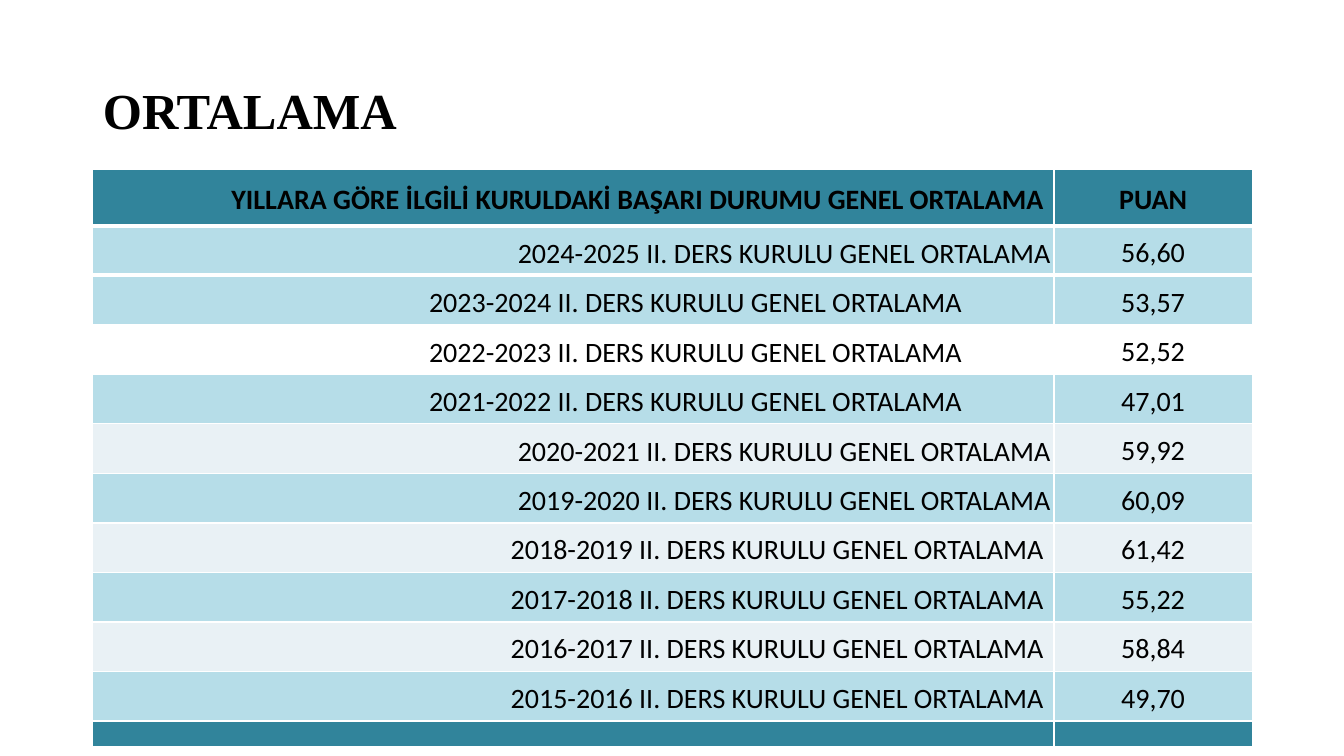
from lxml.etree import SubElement
from pptx import Presentation
from pptx.dml.color import RGBColor
from pptx.enum.text import MSO_ANCHOR as Anchor, PP_ALIGN as Align
from pptx.oxml.ns import qn
from pptx.util import Inches, Pt

COLORS = {"text": "000000", "border": "FFFFFF", "header": "31849B",
          "band": "B6DDE8", "pale": "E9F1F5"}
LABEL = "II. DERS KURULU GENEL ORTALAMA"
HEADINGS = ("YILLARA GÖRE İLGİLİ KURULDAKİ BAŞARI DURUMU GENEL ORTALAMA", "PUAN")
LAST_YEAR = 2024
SCORES = ("56,60", "53,57", "52,52", "47,01", "59,92",
          "60,09", "61,42", "55,22", "58,84", "49,70")
FILLS = ["header", "band", "band", None] + ["band", "pale"] * 3 + ["band", "header"]
TIGHT_ROWS = range(1, 7)
INDENTED_ROWS = range(2, 5)
THICK_EDGES = (0, 1)  # rows with a heavy line below

SLIDE_SIZE = (13.33, 7.5)
TITLE_BOX = (0.92, 0.4, 11.5, 1.45)
TABLE_BOX = (0.92, 1.68, 11.5, 5.71)
LABEL_SHARE = 0.829
HEADER_HEIGHT, FOOTER_HEIGHT = 0.56, 0.25


def add_run(paragraph, text, size, font_name, bold):
    run = paragraph.add_run()
    run.text = text
    font = run.font
    font.size, font.name, font.bold = Pt(size), font_name, bold
    font.color.rgb = RGBColor.from_string(COLORS["text"])


def set_margins(cell, left, top, right, bottom):
    cell.margin_left, cell.margin_top = Inches(left), Inches(top)
    cell.margin_right, cell.margin_bottom = Inches(right), Inches(bottom)


def style_cell(cell, row):
    properties = cell._tc.get_or_add_tcPr()
    widths = {"L": 1, "R": 1,
              "T": 3 if row - 1 in THICK_EDGES else 1,
              "B": 3 if row in THICK_EDGES else 1}
    for side, width in widths.items():
        line = SubElement(properties, qn(f"a:ln{side}"), w=str(Pt(width)))
        fill = SubElement(line, qn("a:solidFill"))
        SubElement(fill, qn("a:srgbClr"), val=COLORS["border"])
    if FILLS[row]:
        cell.fill.solid()
        cell.fill.fore_color.rgb = RGBColor.from_string(COLORS[FILLS[row]])
    else:
        cell.fill.background()


def write_cell(cell, text, align, bold):
    cell.vertical_anchor = Anchor.MIDDLE
    paragraph = cell.text_frame.paragraphs[0]
    paragraph.alignment, paragraph.line_spacing = align, 1.15
    add_run(paragraph, text, 20, "Calibri", bold)


def shrink_empty_cell(cell):
    set_margins(cell, 0, 0, 0, 0)
    paragraph = cell.text_frame.paragraphs[0]
    SubElement(paragraph._p, qn("a:endParaRPr"), sz="1000")


def add_title(slide, box):
    title = slide.shapes.title
    title.left, title.top, title.width, title.height = map(Inches, box)
    title.text_frame.vertical_anchor = Anchor.MIDDLE
    paragraph = title.text_frame.paragraphs[0]
    paragraph.alignment, paragraph.line_spacing = Align.LEFT, 0.9
    add_run(paragraph, "ORTALAMA", 36, "Times New Roman", True)


def add_score_table(slide, box):
    years = range(LAST_YEAR, LAST_YEAR - len(SCORES), -1)
    rows = [HEADINGS] + [(f"{year}-{year + 1} {LABEL}", score)
                         for year, score in zip(years, SCORES)]
    table = slide.shapes.add_table(len(rows) + 1, 2, *map(Inches, box)).table
    table.first_row = table.horz_banding = False
    width, height = box[2:]
    table.columns[0].width = Inches(width * LABEL_SHARE)
    table.columns[1].width = Inches(width * (1 - LABEL_SHARE))
    score_height = (height - HEADER_HEIGHT - FOOTER_HEIGHT) / len(SCORES)
    heights = [HEADER_HEIGHT] + [score_height] * len(SCORES) + [FOOTER_HEIGHT]

    for index, row_height in enumerate(heights):
        table.rows[index].height = Inches(row_height)
        for cell in table.rows[index].cells:
            style_cell(cell, index)
    for index, (label, score) in enumerate(rows):
        label_cell, score_cell = table.rows[index].cells
        write_cell(label_cell, label, Align.RIGHT, index == 0)
        write_cell(score_cell, score, Align.CENTER, index == 0)
        if index in TIGHT_ROWS:
            right = 0.91 if index in INDENTED_ROWS else 0.03
            set_margins(label_cell, 0.03, 0.01, right, 0)
    for cell in table.rows[len(rows)].cells:
        shrink_empty_cell(cell)


def main():
    presentation = Presentation()
    presentation.slide_width, presentation.slide_height = map(Inches, SLIDE_SIZE)
    slide = presentation.slides.add_slide(presentation.slide_layouts[5])
    add_title(slide, TITLE_BOX)
    add_score_table(slide, TABLE_BOX)
    presentation.save("out.pptx")


if __name__ == "__main__":
    main()
